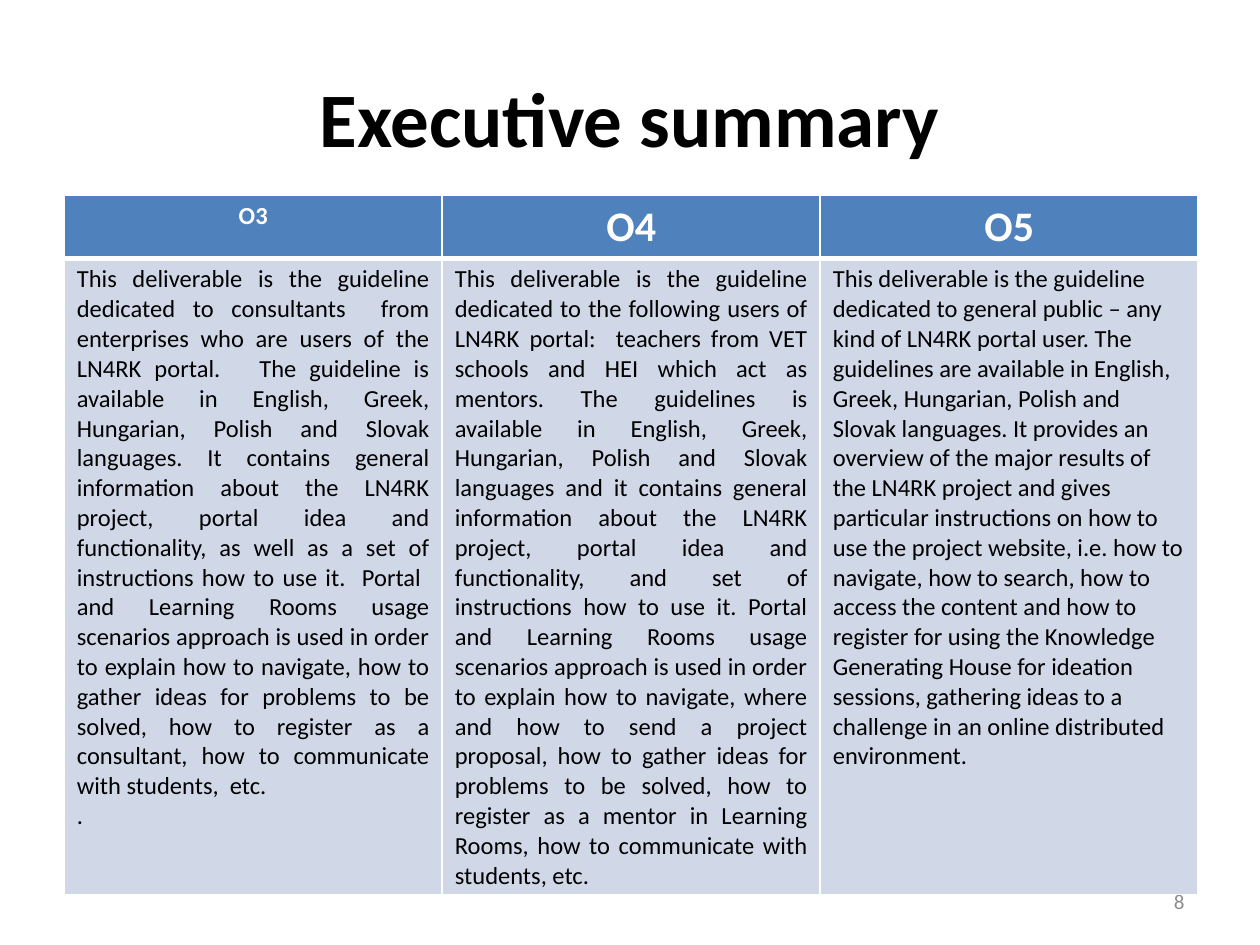
import enum

import pptx
import pptx.dml.color
import pptx.enum.text
import pptx.oxml
import pptx.oxml.ns
import pptx.util

Inches = pptx.util.Inches
Align = pptx.enum.text.PP_ALIGN
Anchor = pptx.enum.text.MSO_ANCHOR


class Theme:
    font = "Calibri"
    black, white, gray = "000000", "FFFFFF", "8C8C8C"
    head, body = "4F81BD", "D0D8E8"
    title, large, text, small = 44, 24, 14, 12


def style(frame, size, color, align, bold=False):
    """Format every paragraph and run of a text frame."""
    for par in frame.paragraphs:
        par.alignment = align
        for run in par.runs:
            run.font.name = Theme.font
            run.font.size = pptx.util.Pt(size)
            run.font.bold = bold
            run.font.color.rgb = pptx.dml.color.RGBColor.from_string(color)


def paint(cell, color, base):
    """Give a cell white borders, the bottom one base points wide, and a fill."""
    props = cell._tc.get_or_add_tcPr()
    for side, width in (("L", 1), ("R", 1), ("T", 1), ("B", base)):
        props.append(pptx.oxml.parse_xml(
            f'<a:ln{side} {pptx.oxml.ns.nsdecls("a")} w="{pptx.util.Pt(width)}">'
            f'<a:solidFill><a:srgbClr val="{Theme.white}"/></a:solidFill></a:ln{side}>'))
    cell.fill.solid()
    cell.fill.fore_color.rgb = pptx.dml.color.RGBColor.from_string(color)


deck = pptx.Presentation()
deck.slide_width, deck.slide_height = Inches(10), Inches(7.5)
slide = deck.slides.add_slide(deck.slide_layouts[6])

# Title and page number
labels = [
    ("Executive summary", (0.5, 0.3, 9, 1.25), Theme.title, Theme.black, Align.CENTER, True),
    ("8", (7.17, 6.95, 2.33, 0.4), Theme.small, Theme.gray, Align.RIGHT, False),
]
for words, place, size, color, align, bold in labels:
    frame = slide.shapes.add_textbox(*map(Inches, place)).text_frame
    frame.word_wrap = True
    frame.vertical_anchor = Anchor.MIDDLE
    frame.text = words
    style(frame, size, color, align, bold)

# Table of deliverables: heading, heading size, text, text alignment
items = [
    ("O3", Theme.text,
     "This deliverable is the guideline dedicated to consultants  from enterprises "
     "who are users of the LN4RK portal.   The guideline is available in English, "
     "Greek, Hungarian, Polish and Slovak languages. It contains general information "
     "about the LN4RK project, portal idea and functionality, as well as a set of "
     "instructions how to use it.  Portal  and Learning Rooms usage scenarios approach "
     "is used in order to explain how to navigate, how to gather ideas for problems to "
     "be solved, how to register as a consultant, how to communicate with students,  "
     "etc.\n.", Align.JUSTIFY),
    ("O4", Theme.large,
     "This deliverable is the guideline dedicated to the following users of LN4RK "
     "portal:  teachers from VET schools and HEI which act as mentors. The guidelines "
     "is available in English, Greek, Hungarian, Polish and Slovak languages and it "
     "contains general information about the LN4RK project, portal idea and "
     "functionality, and set of instructions how to use it. Portal and Learning Rooms "
     "usage scenarios approach is used in order to explain how to navigate, where and "
     "how to send a project proposal, how to gather ideas for problems to be solved, "
     "how to register as a mentor in Learning Rooms, how to communicate with students, "
     "etc.", Align.JUSTIFY),
    ("O5", Theme.large,
     "This deliverable is the guideline dedicated to general public – any kind of "
     "LN4RK portal user. The guidelines are available in English, Greek, Hungarian, "
     "Polish and Slovak languages. It provides an overview of the major results of the "
     "LN4RK project and gives particular instructions on how to use the project "
     "website, i.e. how to navigate, how to search, how to access the content and how "
     "to register for using the Knowledge Generating House for ideation sessions, "
     "gathering ideas to a challenge in an online distributed environment.", Align.LEFT),
]
table = slide.shapes.add_table(
    2, len(items), Inches(0.51), Inches(1.55), Inches(9), Inches(5.55)).table
table.rows[0].height, table.rows[1].height = Inches(0.5), Inches(5.05)
for col, (name, size, words, align) in enumerate(items):
    head, body = table.cell(0, col), table.cell(1, col)
    head.text_frame.text = name
    style(head.text_frame, size, Theme.white, Align.CENTER, True)
    paint(head, Theme.head, 3)
    body.text_frame.text = words
    style(body.text_frame, Theme.text, Theme.black, align)
    paint(body, Theme.body, 1)

deck.save("out.pptx")
